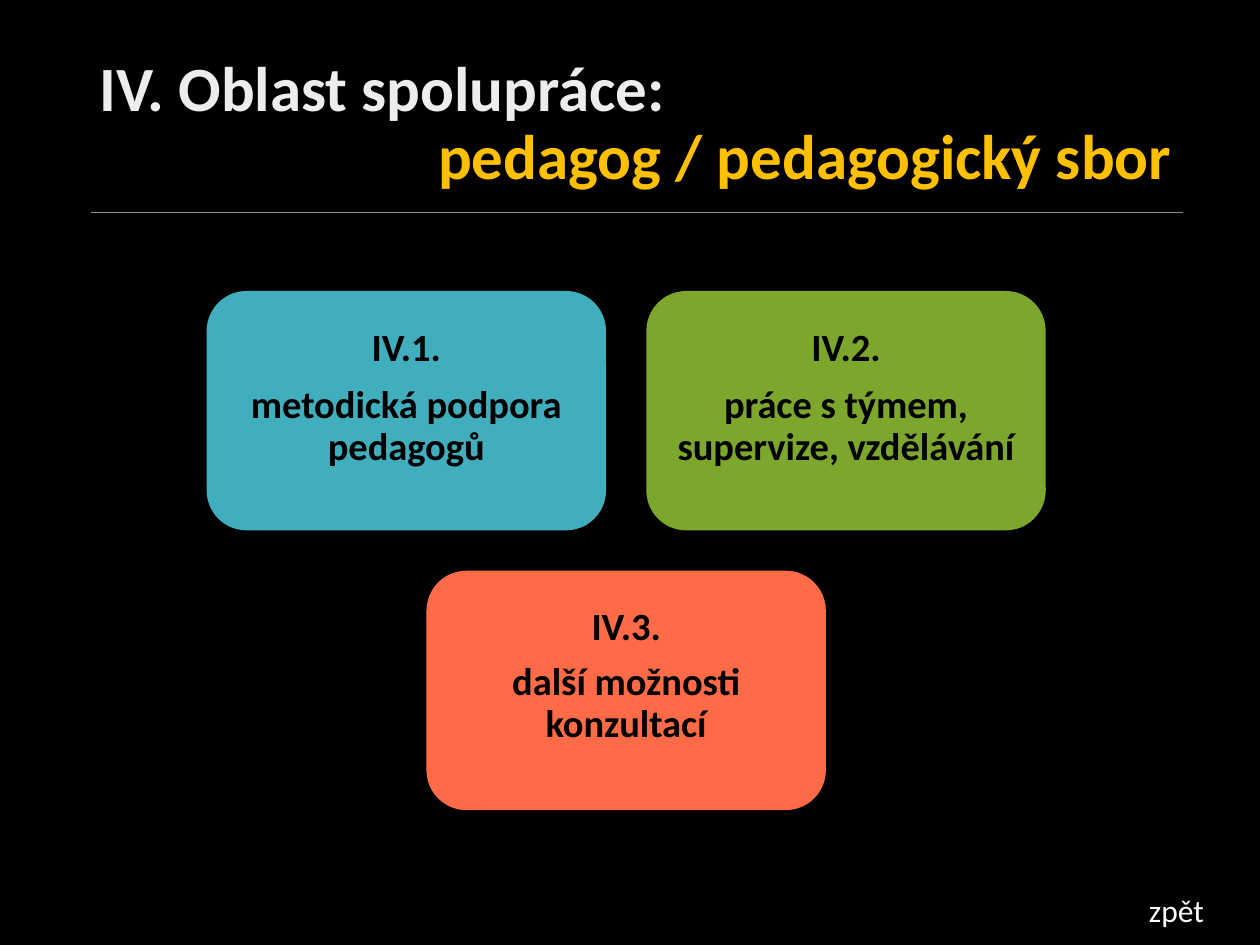
import pptx
import pptx.util
import pptx.dml.color
import pptx.enum.shapes
import pptx.enum.text
import lxml.etree

COLS, ROWS = 100, 75
ALIGN = pptx.enum.text.PP_ALIGN
ANCHOR = pptx.enum.text.MSO_ANCHOR
FIT = pptx.enum.text.MSO_AUTO_SIZE


def tint(code):
    return pptx.dml.color.RGBColor.from_string(code)


def write(frame, text, first=False, face="Calibri", size=18, color="FFFFFF",
          bold=False, align=ALIGN.LEFT, lead=1.0, after=0):
    para = frame.paragraphs[0] if first else frame.add_paragraph()
    para.alignment = align
    para.line_spacing = lead
    para.space_before = pptx.util.Pt(0)
    para.space_after = pptx.util.Pt(after)
    run = para.add_run()
    run.text = text
    run.font.name = face
    run.font.size = pptx.util.Pt(size)
    run.font.bold = bold
    run.font.color.rgb = tint(color)


class Deck:
    def __init__(self):
        self.show = pptx.Presentation()
        self.show.slide_width = pptx.util.Inches(10)
        self.show.slide_height = pptx.util.Inches(7.5)
        self.slide = self.show.slides.add_slide(self.show.slide_layouts[5])
        back = self.slide.background.fill
        back.solid()
        back.fore_color.rgb = tint("000000")

    def area(self, col, row, wide, high):
        unit_x = self.show.slide_width / COLS
        unit_y = self.show.slide_height / ROWS
        return [round(n) for n in (col * unit_x, row * unit_y,
                                   wide * unit_x, high * unit_y)]

    def inset(self, frame, left, top, right, base):
        frame.word_wrap = True
        frame.vertical_anchor = ANCHOR.TOP
        frame.margin_left = pptx.util.Inches(left)
        frame.margin_top = pptx.util.Inches(top)
        frame.margin_right = pptx.util.Inches(right)
        frame.margin_bottom = pptx.util.Inches(base)

    def title(self, area, lead, topic):
        head = self.slide.shapes.title
        head.left, head.top, head.width, head.height = self.area(*area)
        frame = head.text_frame
        frame.auto_size = FIT.NONE
        self.inset(frame, 0.1, 0.05, 0.27, 0.05)
        style = dict(size=36, bold=True, lead=0.9)
        write(frame, lead, first=True, color="EDEDED", **style)
        write(frame, topic, color="FFC000", align=ALIGN.RIGHT, **style)

    def rule(self, col, row, wide, color):
        left, top, width, high = self.area(col, row, wide, 0)
        line = self.slide.shapes.add_connector(
            pptx.enum.shapes.MSO_CONNECTOR.STRAIGHT, left, top, left + width, top)
        line.line.color.rgb = tint(color)
        line.line.width = pptx.util.Pt(0.5)
        lxml.etree.SubElement(line._element.spPr, pptx.oxml.ns.qn("a:effectLst"))

    def card(self, area, color, mark, text, after):
        card = self.slide.shapes.add_shape(
            pptx.enum.shapes.MSO_SHAPE.FLOWCHART_ALTERNATE_PROCESS, *self.area(*area))
        card.shadow.inherit = False
        card.fill.solid()
        card.fill.fore_color.rgb = tint(color)
        card.line.fill.background()
        frame = card.text_frame
        self.inset(frame, 0.09, 0.2, 0.09, 0.09)
        style = dict(size=22, color="000000", bold=True, align=ALIGN.CENTER, lead=0.9)
        write(frame, mark, first=True, after=after, **style)
        write(frame, text, **style)

    def label(self, area, text):
        frame = self.slide.shapes.add_textbox(*self.area(*area)).text_frame
        frame.word_wrap = True
        frame.auto_size = FIT.SHAPE_TO_FIT_TEXT
        write(frame, text, first=True)


def main():
    deck = Deck()
    deck.title((6.9, 4, 88.8, 14.5), "IV. Oblast spolupráce:",
               "pedagog / pedagogický sbor")
    deck.rule(7.2, 16.9, 86.7, "8C8C8C")

    left, top, wide, high, gap = 16.4, 23.1, 31.7, 19, 3.2
    cards = [
        (0, 0, "41AEBD", "IV.1.", "metodická podpora pedagogů", 9.2),
        (1, 0, "7DA62C", "IV.2.", "práce s týmem, supervize, vzdělávání", 9.2),
        (0.5, 1, "FF6A47", "IV.3.", "další možnosti konzultací", 7.7),
    ]
    for col, row, color, mark, text, after in cards:
        spot = (left + col * (wide + gap), top + row * (high + gap), wide, high)
        deck.card(spot, color, mark, text, after)

    deck.label((90.2, 70.2, 7.9, 4), "zpět")
    deck.show.save("out.pptx")


if __name__ == "__main__":
    main()
